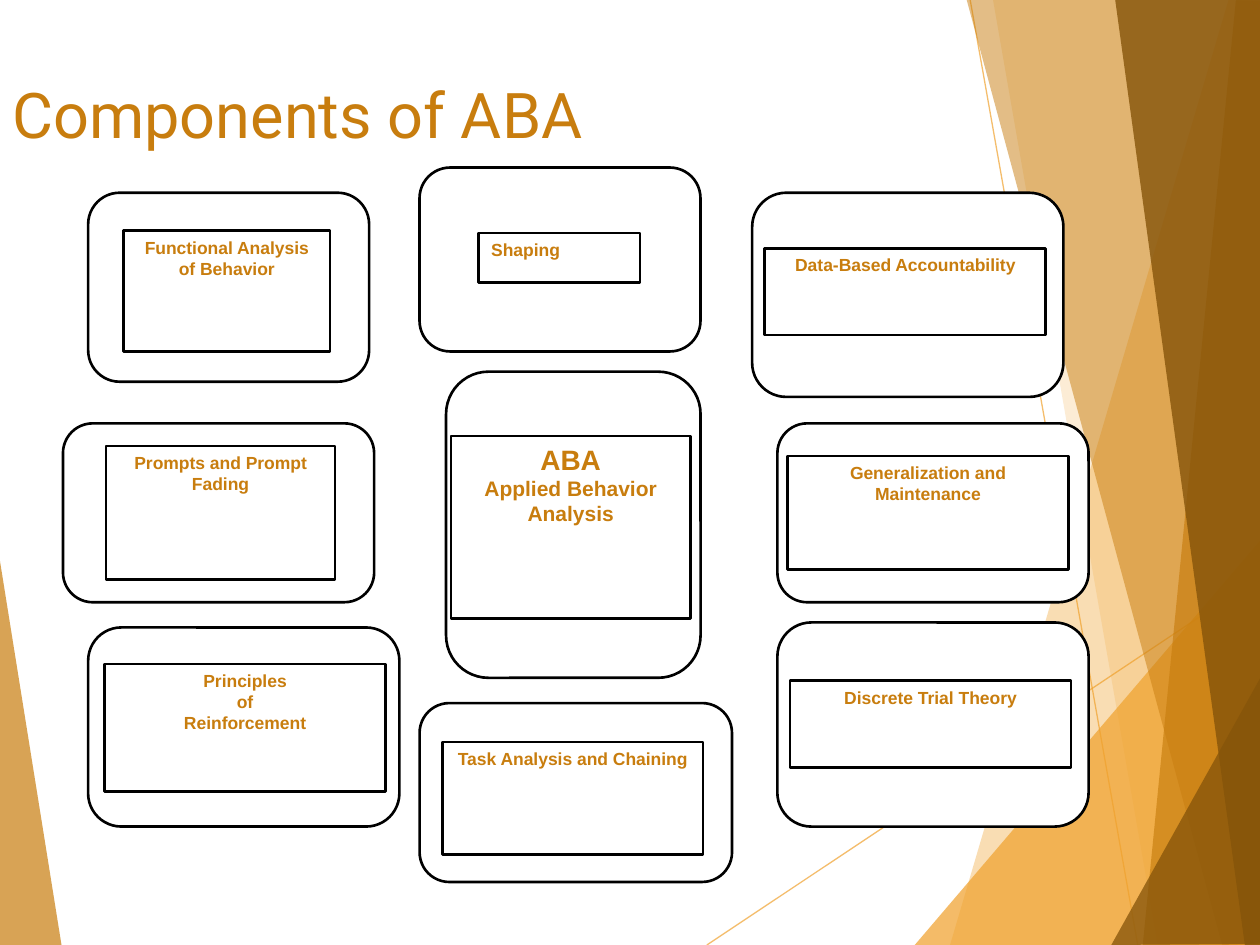
from dataclasses import dataclass

from lxml.etree import SubElement
from pptx import Presentation
from pptx.dml.color import RGBColor
from pptx.enum.shapes import MSO_CONNECTOR, MSO_SHAPE
from pptx.enum.text import MSO_ANCHOR, PP_ALIGN
from pptx.oxml.ns import qn
from pptx.util import Inches, Pt


@dataclass(frozen=True)
class Theme:
    gold: str = "F0A22E"
    amber: str = "C87D0E"
    brown: str = "85540A"
    white: str = "FFFFFF"
    black: str = "000000"
    head: int = 36
    lead: int = 16
    sub: int = 12
    label: int = 10
    thin: float = 0.75
    edge: float = 1.5
    display: str = "Roboto"
    text: str = "Arial"


THEME = Theme()
CENTER, LEFT = PP_ALIGN.CENTER, PP_ALIGN.LEFT

RAYS = [
    ((5.61, 7.5), (10.01, 4.57)),
    ((7.7, 0), (9.03, 7.5)),
]

SHARDS = [
    (THEME.gold, 36, [(9.75, 0), (7.54, 7.5), (10.02, 7.51), (10.01, 0.01)]),
    (THEME.gold, 20, [(7.88, -0.01), (9.19, 7.5), (10.01, 7.5), (10.01, -0.01)]),
    (THEME.gold, 72, [(7.26, 7.5), (10, 4.29), (10.01, 7.5)]),
    (THEME.amber, 50, [(7.67, -0.01), (9.7, 7.5), (10.01, 7.49), (10.01, -0.01)]),
    (THEME.amber, 66, [(9.81, -0.01), (9.07, 7.5), (10.01, 7.5), (10, -0.01)]),
    (THEME.brown, 80, [(8.85, -0.01), (9.88, 7.5), (10.02, 7.5), (10, -0.01)]),
    (THEME.brown, 76, [(8.82, 7.5), (10.02, 5.35), (10.02, 7.49)]),
    (THEME.amber, 70, [(-0.01, 4.39), (0.49, 7.51), (-0.01, 7.5)]),
]

CARDS = [
    ((0.7, 1.53, 2.23, 1.5), (0.98, 1.83, 1.64, 0.96),
     ["Functional Analysis of Behavior"], CENTER),
    ((5.97, 1.53, 2.47, 1.62), (6.07, 1.97, 2.23, 0.69),
     ["Data-Based Accountability"], CENTER),
    ((0.5, 3.36, 2.47, 1.42), (0.84, 3.54, 1.82, 1.06),
     ["Prompts and Prompt Fading"], CENTER),
    ((0.7, 4.98, 2.47, 1.58), (0.83, 5.27, 2.23, 1.01),
     ["Principles", "of", "Reinforcement"], CENTER),
    ((6.17, 4.94, 2.47, 1.62), (6.27, 5.4, 2.23, 0.69),
     ["Discrete Trial Theory"], CENTER),
    ((6.17, 3.36, 2.47, 1.42), (6.25, 3.62, 2.23, 0.9),
     ["Generalization and Maintenance"], CENTER),
    ((3.33, 5.58, 2.48, 1.42), (3.51, 5.89, 2.07, 0.89),
     ["Task Analysis and Chaining"], CENTER),
    ((3.33, 1.33, 2.23, 1.46), (3.8, 1.85, 1.28, 0.39),
     ["Shaping"], LEFT),
]

CORE = ((3.54, 2.95, 2.02, 2.43), (3.58, 3.46, 1.9, 1.45))


def rgb(color):
    return RGBColor.from_string(color)


def paint(fill, color):
    fill.solid()
    fill.fore_color.rgb = rgb(color)


def set_alpha(shape, alpha):
    tint = next(shape.element.spPr.iter(qn("a:srgbClr")))
    SubElement(tint, qn("a:alpha")).set("val", str(alpha * 1000))


def add_ray(slide, start, end):
    ends = [Inches(v) for v in start + end]
    ray = slide.shapes.add_connector(MSO_CONNECTOR.STRAIGHT, *ends)
    ray.line.width = Pt(THEME.thin)
    paint(ray.line.fill, THEME.gold)
    set_alpha(ray, 70)
    SubElement(ray.element.spPr, qn("a:effectLst"))


def add_shard(slide, color, alpha, points):
    first, *rest = [(Inches(x), Inches(y)) for x, y in points]
    pen = slide.shapes.build_freeform(*first)
    pen.add_line_segments(rest, close=True)
    shard = pen.convert_to_shape()
    shard.shadow.inherit = False
    paint(shard.fill, color)
    set_alpha(shard, alpha)
    shard.line.fill.background()


def add_run(para, text, size, font, bold=False):
    run = para.add_run()
    run.text = text
    run.font.size = Pt(size)
    run.font.name = font
    run.font.bold = bold
    run.font.color.rgb = rgb(THEME.amber)


def add_title(slide, text):
    title = slide.shapes.title
    title.left, title.top = Inches(0), Inches(0.25)
    title.width, title.height = Inches(8.77), Inches(1)
    title.text_frame.vertical_anchor = MSO_ANCHOR.BOTTOM
    para = title.text_frame.paragraphs[0]
    para.alignment = LEFT
    add_run(para, text, THEME.head, THEME.display)
    title.element.getparent().append(title.element)


def add_panel(slide, kind, place):
    panel = slide.shapes.add_shape(kind, *map(Inches, place))
    panel.shadow.inherit = False
    paint(panel.fill, THEME.white)
    panel.line.width = Pt(THEME.edge)
    panel.line.color.rgb = rgb(THEME.black)
    return panel


def add_card(slide, outer, inner, lines, align):
    add_panel(slide, MSO_SHAPE.FLOWCHART_ALTERNATE_PROCESS, outer)
    frame = add_panel(slide, MSO_SHAPE.RECTANGLE, inner).text_frame
    frame.word_wrap = True
    frame.vertical_anchor = MSO_ANCHOR.TOP
    for i, (text, size) in enumerate(lines):
        para = frame.add_paragraph() if i else frame.paragraphs[0]
        para.alignment = align
        add_run(para, text, size, THEME.text, True)


def main():
    deck = Presentation()
    deck.slide_width, deck.slide_height = Inches(10), Inches(7.5)
    slide = deck.slides.add_slide(deck.slide_layouts[5])
    for start, end in RAYS:
        add_ray(slide, start, end)
    for color, alpha, points in SHARDS:
        add_shard(slide, color, alpha, points)
    add_title(slide, "Components of ABA")
    for outer, inner, lines, align in CARDS:
        sized = [(text, THEME.label) for text in lines]
        add_card(slide, outer, inner, sized, align)
    heart = [("ABA", THEME.lead), ("Applied Behavior Analysis", THEME.sub)]
    add_card(slide, *CORE, heart, CENTER)
    deck.save("out.pptx")


if __name__ == "__main__":
    main()
